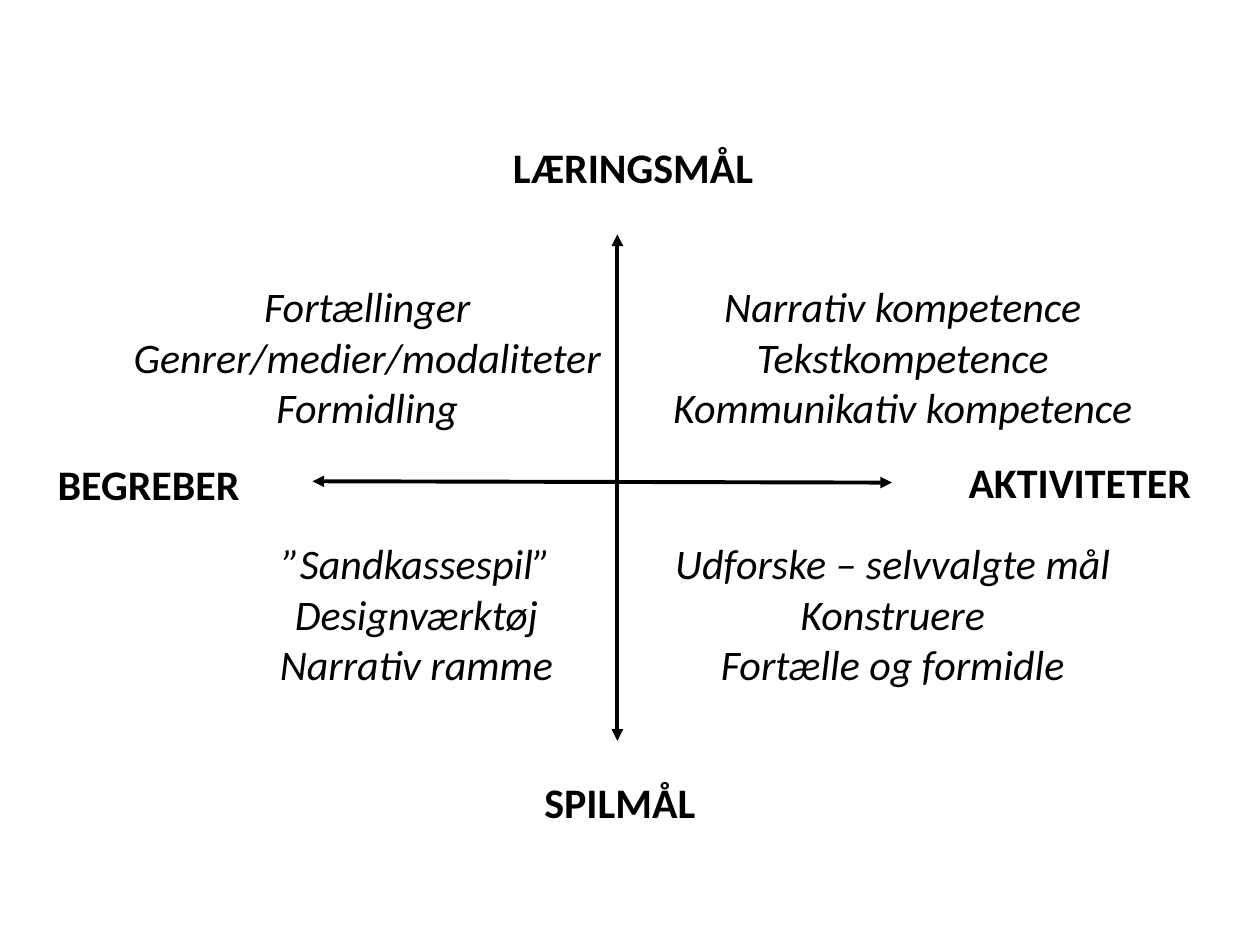
from lxml.etree import SubElement
from pptx import Presentation
from pptx.dml.color import RGBColor
from pptx.enum.shapes import MSO_CONNECTOR as Connector
from pptx.enum.text import MSO_ANCHOR as Anchor, PP_ALIGN as Align
from pptx.oxml.ns import qn
from pptx.util import Inches, Pt

BLACK = "000000"
AXIS_LABELS = [
    ("LÆRINGSMÅL", 3.86, 1.07, 2.33, 0.79),
    ("SPILMÅL", 3.62, 6.11, 2.6, 0.79),
    ("AKTIVITETER", 7.18, 3.57, 2.78, 0.81),
    ("BEGREBER", -0.2, 3.59, 2.76, 1.02),
]
AXES = [(2.48, 3.82, 7.08, 3.83), (4.9, 1.86, 4.9, 5.88)]
UPPER, LOWER = 2.18, 4.22
QUADRANTS = [
    ("Fortællinger\nGenrer/medier/modaliteter\nFormidling", 0.83, UPPER, 4.17, 1.02),
    ("”Sandkassespil”\nDesignværktøj\nNarrativ ramme", 1.85, LOWER, 2.91, 1.02),
    ("Narrativ kompetence\nTekstkompetence\nKommunikativ kompetence", 5, UPPER, 4.33, 1.02),
    ("Udforske – selvvalgte mål\nKonstruere\nFortælle og formidle", 5, LOWER, 4.17, 0.79),
]


def color(hex_string):
    """Return the colour for a hex string."""
    return RGBColor.from_string(hex_string)


def add_text(slide, text, left, top, width, height, bold=False, italic=False):
    """Add a centred text box with one paragraph per line."""
    box = slide.shapes.add_textbox(*map(Inches, (left, top, width, height)))
    frame = box.text_frame
    frame.word_wrap = True
    frame.vertical_anchor = Anchor.TOP
    frame.text = text
    for paragraph in frame.paragraphs:
        paragraph.alignment = Align.CENTER
        font = paragraph.font
        font.name, font.size = "Calibri", Pt(24)
        font.bold, font.italic = bold, italic
        font.color.rgb = color(BLACK)


def add_axis(slide, *ends):
    """Add a straight line with an arrowhead at both ends."""
    axis = slide.shapes.add_connector(Connector.STRAIGHT, *map(Inches, ends))
    axis.line.color.rgb = color(BLACK)
    axis.line.width = Pt(2.25)
    line = axis.line._get_or_add_ln()
    for end in ("a:headEnd", "a:tailEnd"):
        SubElement(line, qn(end), type="triangle")
    SubElement(axis._element.spPr, qn("a:effectLst"))


def main():
    """Build and save the slide."""
    presentation = Presentation()
    presentation.slide_width, presentation.slide_height = Inches(10), Inches(7.5)
    slide = presentation.slides.add_slide(presentation.slide_layouts[6])
    for label in AXIS_LABELS:
        add_text(slide, *label, bold=True)
    for ends in AXES:
        add_axis(slide, *ends)
    for quadrant in QUADRANTS:
        add_text(slide, *quadrant, italic=True)
    presentation.save("out.pptx")


if __name__ == "__main__":
    main()
